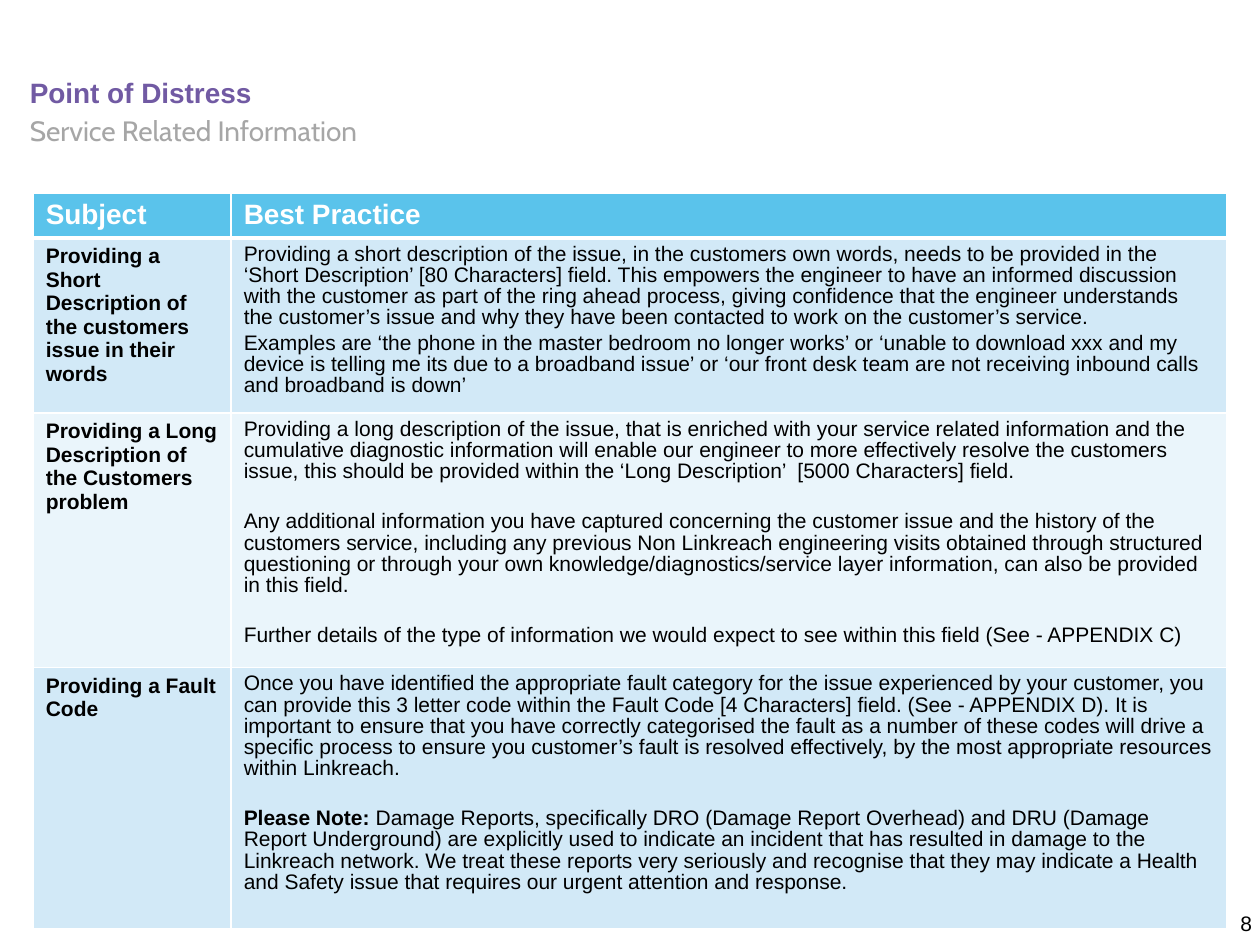
from dataclasses import dataclass

from lxml import etree
from pptx import Presentation
from pptx.dml.color import RGBColor
from pptx.enum.text import MSO_ANCHOR, MSO_AUTO_SIZE, PP_ALIGN
from pptx.oxml.ns import qn
from pptx.util import Cm, Pt

LEFT, CENTER = PP_ALIGN.LEFT, PP_ALIGN.CENTER
TOP, MIDDLE = MSO_ANCHOR.TOP, MSO_ANCHOR.MIDDLE
NO_AUTOFIT = MSO_AUTO_SIZE.NONE


@dataclass(frozen=True)
class Theme:
    font: str = "Arial"
    subtitle_font: str = "Cabin"
    heading_size: int = 16
    text_size: int = 12
    title: str = "715AA3"
    subtitle: str = "A6A6A6"
    text: str = "000000"
    white: str = "FFFFFF"
    header_fill: str = "5AC3EB"
    band_fills: tuple = ("D2E9F7", "EAF5FB")
    line_spacing: float = 0.9
    paragraph_gap: float = 2.5
    section_gap: float = 16.5
    border: float = 1
    header_border: float = 3


THEME = Theme()

HEADERS = ("Subject", "Best Practice")
COLUMN_WIDTHS = (3.99, 20.07)
ROW_HEIGHTS = (0.9, 3.53, 5.13, 5.26)

# Each row: subject, gap between paragraphs, paragraphs of (text, bold) runs
ROWS = (
    (
        "Providing a Short Description of the customers issue in their words",
        THEME.paragraph_gap,
        (
            (("Providing a short description of the issue, in the customers own words, "
              "needs to be provided in the ‘Short Description’ [80 Characters] field. "
              "This empowers the engineer to have an informed discussion with the "
              "customer as part of the ring ahead process, giving confidence that the "
              "engineer understands the customer’s issue and why they have been "
              "contacted to work on the customer’s service.", False),),
            (("Examples are ‘the phone in the master bedroom no longer works’ or "
              "‘unable to download xxx and my device is telling me its due to a "
              "broadband issue’ or ‘our front desk team are not receiving inbound "
              "calls and broadband is down’", False),),
        ),
    ),
    (
        "Providing a Long Description of the Customers problem",
        THEME.section_gap,
        (
            (("Providing a long description of the issue, that is enriched with your "
              "service related information and the cumulative diagnostic information "
              "will enable our engineer to more effectively resolve the customers "
              "issue, this should be provided within the ‘Long Description’  "
              "[5000 Characters] field.", False),),
            (("Any additional information you have captured concerning the customer "
              "issue and the history of the customers service, including any previous "
              "Non Linkreach engineering visits obtained through structured "
              "questioning or through your own knowledge/diagnostics/service layer "
              "information, can also be provided in this field.", False),),
            (("Further details of the type of information we would expect to see "
              "within this field (See - APPENDIX C)", False),),
        ),
    ),
    (
        "Providing a Fault Code",
        THEME.section_gap,
        (
            (("Once you have identified the appropriate fault category for the issue "
              "experienced by your customer, you can provide this 3 letter code within "
              "the Fault Code [4 Characters] field. (See - APPENDIX D). It is important "
              "to ensure that you have correctly categorised the fault as a number of "
              "these codes will drive a specific process to ensure you customer’s fault "
              "is resolved effectively, by the most appropriate resources within "
              "Linkreach.", False),),
            (("Please Note:", True),
             (" Damage Reports, specifically DRO (Damage Report Overhead) and DRU "
              "(Damage Report Underground) are explicitly used to indicate an incident "
              "that has resulted in damage to the Linkreach network. We treat these "
              "reports very seriously and recognise that they may indicate a Health and "
              "Safety issue that requires our urgent attention and response.", False)),
        ),
    ),
)


def format_font(font, size, color, bold=False, name=THEME.font):
    font.name = name
    font.size = Pt(size)
    font.bold = bold
    font.color.rgb = RGBColor.from_string(color)


def place_text(shape, box, text, anchor, alignment):
    """Put one line of text in a shape without margins and return its run."""
    shape.left, shape.top, shape.width, shape.height = (Cm(value) for value in box)
    text_frame = shape.text_frame
    text_frame.text = text
    text_frame.word_wrap = True
    text_frame.auto_size = NO_AUTOFIT
    text_frame.vertical_anchor = anchor
    text_frame.margin_left = text_frame.margin_right = 0
    text_frame.margin_top = text_frame.margin_bottom = 0
    paragraph = text_frame.paragraphs[0]
    paragraph.alignment = alignment
    paragraph.space_before = Pt(0)
    return paragraph.runs[0]


def remove_bullet(paragraph):
    properties = paragraph._p.get_or_add_pPr()
    properties.set("marL", "0")
    properties.set("indent", "0")
    etree.SubElement(properties, qn("a:buNone"))


def style_cell(cell, fill, top_border, bottom_border):
    """Draw the white borders, then the fill that must follow them."""
    properties = cell._tc.get_or_add_tcPr()
    widths = {"lnL": THEME.border, "lnR": THEME.border,
              "lnT": top_border, "lnB": bottom_border}
    for tag, width in widths.items():
        line = etree.SubElement(properties, qn(f"a:{tag}"), w=str(Pt(width)))
        solid = etree.SubElement(line, qn("a:solidFill"))
        etree.SubElement(solid, qn("a:srgbClr"), val=THEME.white)
    cell.fill.solid()
    cell.fill.fore_color.rgb = RGBColor.from_string(fill)


def write_label(cell, text, size, color):
    cell.text_frame.text = text
    format_font(cell.text_frame.paragraphs[0].runs[0].font, size, color, bold=True)


def write_paragraphs(cell, paragraphs, gap):
    text_frame = cell.text_frame
    for index, runs in enumerate(paragraphs):
        paragraph = text_frame.add_paragraph() if index else text_frame.paragraphs[0]
        paragraph.line_spacing = THEME.line_spacing
        paragraph.space_before = Pt(gap if index else 0)
        for text, bold in runs:
            run = paragraph.add_run()
            run.text = text
            format_font(run.font, THEME.text_size, THEME.text, bold)


def add_practice_table(slide):
    table = slide.shapes.add_table(
        len(ROW_HEIGHTS), len(COLUMN_WIDTHS), Cm(0.67), Cm(3.9),
        Cm(sum(COLUMN_WIDTHS)), Cm(sum(ROW_HEIGHTS))).table
    for column, width in zip(table.columns, COLUMN_WIDTHS):
        column.width = Cm(width)
    for row, height in zip(table.rows, ROW_HEIGHTS):
        row.height = Cm(height)

    # Header row
    for cell, header in zip(table.rows[0].cells, HEADERS):
        style_cell(cell, THEME.header_fill, THEME.border, THEME.header_border)
        write_label(cell, header, THEME.heading_size, THEME.white)

    # Banded rows
    for index, (subject, gap, paragraphs) in enumerate(ROWS):
        subject_cell, practice_cell = table.rows[index + 1].cells
        top_border = THEME.border if index else THEME.header_border
        for cell in (subject_cell, practice_cell):
            style_cell(cell, THEME.band_fills[index % 2], top_border, THEME.border)
        write_label(subject_cell, subject, THEME.text_size, THEME.text)
        write_paragraphs(practice_cell, paragraphs, gap)


def main():
    presentation = Presentation()
    presentation.slide_width, presentation.slide_height = Cm(25.4), Cm(19.05)
    slide = presentation.slides.add_slide(presentation.slide_layouts[1])

    # Title and subtitle
    title = place_text(slide.shapes.title, (0.6, 1.5, 18.08, 0.71),
                       "Point of Distress", MIDDLE, LEFT)
    format_font(title.font, THEME.heading_size, THEME.title, bold=True)
    body = slide.placeholders[1]
    subtitle = place_text(body, (0.6, 2.29, 18.08, 1.32),
                          "Service Related Information", TOP, LEFT)
    remove_bullet(body.text_frame.paragraphs[0])
    format_font(subtitle.font, THEME.heading_size, THEME.subtitle,
                name=THEME.subtitle_font)

    add_practice_table(slide)

    # Page number
    number_box = slide.shapes.add_textbox(0, 0, 0, 0)
    number = place_text(number_box, (24.87, 18.36, 0.5, 0.69), "8", TOP, CENTER)
    format_font(number.font, THEME.text_size, THEME.text)

    presentation.save("out.pptx")


if __name__ == "__main__":
    main()
